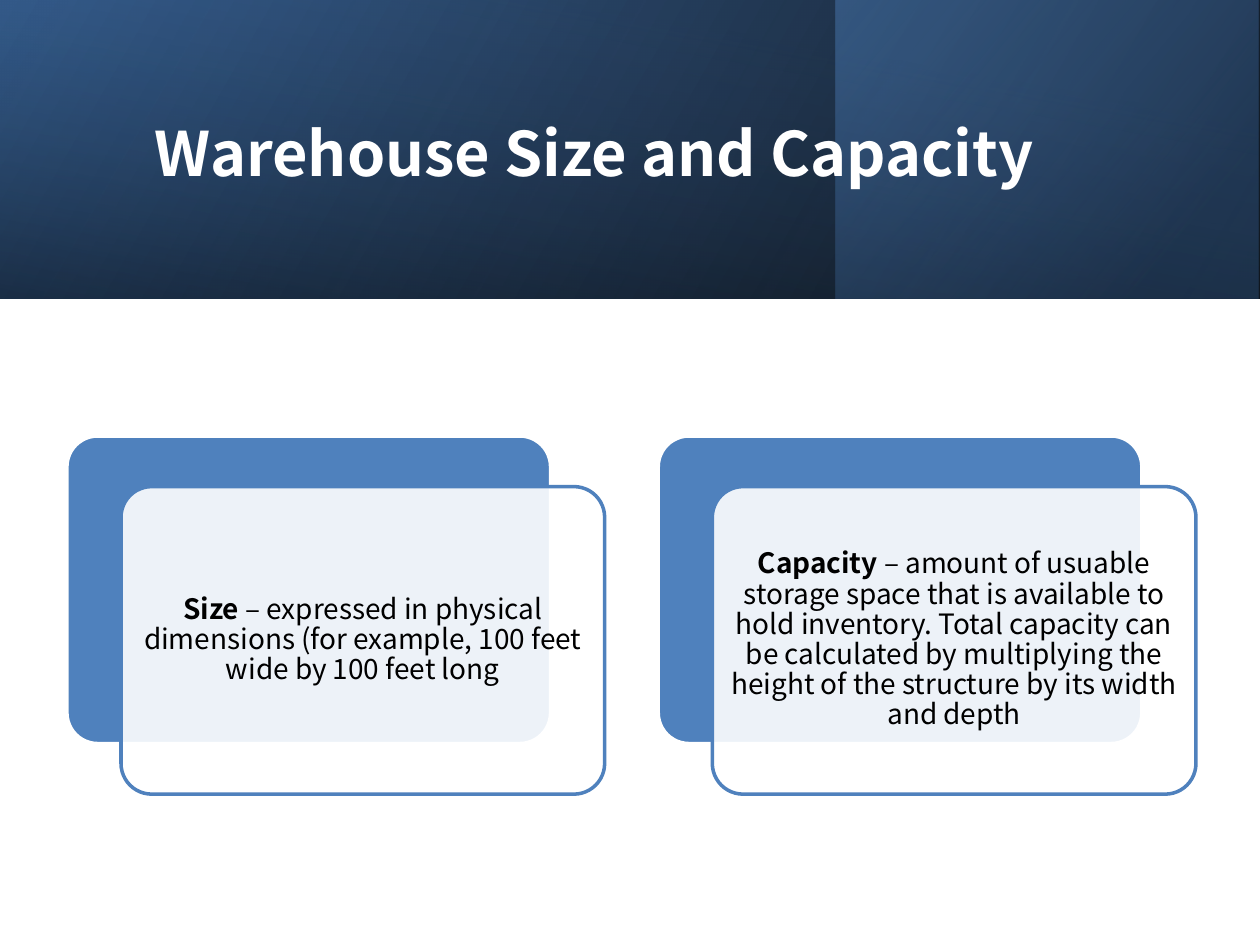
from lxml.etree import SubElement
from pptx import Presentation
from pptx.dml.color import RGBColor
from pptx.enum.shapes import MSO_SHAPE as Preset
from pptx.enum.text import MSO_ANCHOR as Anchor, MSO_AUTO_SIZE as AutoSize, PP_ALIGN as Align
from pptx.oxml.ns import qn
from pptx.util import Cm, Pt

FONT = "Noto Sans CJK KR"
WHITE = RGBColor(0xFF, 0xFF, 0xFF)
BLACK = RGBColor(0x00, 0x00, 0x00)
BLUE = RGBColor(0x4F, 0x81, 0xBD)
DEEP_BLUE = RGBColor(0x37, 0x60, 0x92)
NAVY = RGBColor(0x25, 0x40, 0x61)

PAGE_WIDTH, PAGE_HEIGHT = 25.4, 19.05
BANNER_HEIGHT = 6.02
CARD_LEFT, CARD_TOP, CARD_STEP = 1.35, 8.79, 11.92
CARD_WIDTH, CARD_HEIGHT = 9.75, 6.2
CARD_SHIFT_X, CARD_SHIFT_Y = 1.09, 1.02

CARDS = [
    ("Size", " – expressed in physical dimensions (for example, 100 feet wide by 100 feet long"),
    ("Capacity", " – amount of usuable storage space that is available to hold inventory. "
                 "Total capacity can be calculated by multiplying the height of the structure "
                 "by its width and depth"),
]


def set_opacity(color_element, percent):
    SubElement(color_element, qn("a:alpha")).set("val", str(percent * 1000))


def add_panel(page, preset, left, top, width, height):
    panel = page.shapes.add_shape(preset, Cm(left), Cm(top), Cm(width), Cm(height))
    panel.shadow.inherit = False
    return panel


def add_gradient_panel(page, left, top, width, height, angle, stops, rotation=0):
    panel = add_panel(page, Preset.RECTANGLE, left, top, width, height)
    panel.rotation = rotation
    panel.line.fill.background()
    properties = panel._element.spPr
    properties.find(qn("a:xfrm")).set("flipH", "1")
    panel.fill.gradient()
    gradient = properties.find(qn("a:gradFill"))
    gradient.set("rotWithShape", "1")
    gradient.find(qn("a:lin")).set("ang", str(angle * 60000))
    stop_list = gradient.find(qn("a:gsLst"))
    for old_stop in list(stop_list):
        stop_list.remove(old_stop)
    for position, color, opacity in stops:
        stop = SubElement(stop_list, qn("a:gs"))
        stop.set("pos", str(position * 1000))
        color_element = SubElement(stop, qn("a:srgbClr"))
        color_element.set("val", str(color))
        set_opacity(color_element, opacity)


def add_banner(page, left, top, width, height):
    add_gradient_panel(page, left, top, width, height, 330,
                       [(0, BLACK, 96), (100, DEEP_BLUE, 100)])
    add_gradient_panel(page, left + 16.84, top, 8.53, height, 320,
                       [(19, NAVY, 68), (100, BLUE, 48)])
    offset = (width - height) / 2
    add_gradient_panel(page, left + offset, top - offset, height, width, 350,
                       [(23, DEEP_BLUE, 16), (99, BLACK, 45)], rotation=270)


def place_title(page, left, top, width, height):
    title = page.shapes.title
    title.left, title.top, title.width, title.height = Cm(left), Cm(top), Cm(width), Cm(height)
    title._element.getparent().append(title._element)
    frame = title.text_frame
    frame.text = "Warehouse Size and Capacity"
    frame.auto_size = AutoSize.NONE
    frame.vertical_anchor = Anchor.MIDDLE
    para = frame.paragraphs[0]
    para.alignment = Align.LEFT
    para.line_spacing = 0.9
    para.font.name, para.font.size, para.font.bold = FONT, Pt(35), True
    para.font.color.rgb = WHITE


def add_rounded_panel(page, left, top, width, height, fill_color, line_color):
    panel = add_panel(page, Preset.ROUNDED_RECTANGLE, left, top, width, height)
    panel.adjustments[0] = 0.1
    panel.fill.solid()
    panel.fill.fore_color.rgb = fill_color
    panel.line.color.rgb = line_color
    panel.line.width = Pt(2)
    return panel


def add_card(page, left, top, width, height, term, definition):
    add_rounded_panel(page, left, top, width, height, BLUE, WHITE)
    front = add_rounded_panel(page, left + CARD_SHIFT_X, top + CARD_SHIFT_Y,
                              width, height, WHITE, BLUE)
    set_opacity(front._element.spPr.find(qn("a:solidFill"))[0], 90)
    frame = front.text_frame
    frame.word_wrap = True
    frame.vertical_anchor = Anchor.MIDDLE
    frame.margin_left = frame.margin_right = Cm(0.17)
    frame.margin_top = frame.margin_bottom = Cm(0.17)
    para = frame.paragraphs[0]
    para.alignment = Align.CENTER
    para.line_spacing = 0.9
    para.font.name, para.font.size = FONT, Pt(16)
    para.font.color.rgb = BLACK
    for text, bold in ((term, True), (definition, False)):
        span = para.add_run()
        span.text = text
        span.font.bold = bold


def main():
    deck = Presentation()
    deck.slide_width, deck.slide_height = Cm(PAGE_WIDTH), Cm(PAGE_HEIGHT)
    page = deck.slides.add_slide(deck.slide_layouts[5])
    add_banner(page, 0, 0, PAGE_WIDTH, BANNER_HEIGHT)
    place_title(page, 2.87, 0.97, 20.24, 4.37)
    for index, (term, definition) in enumerate(CARDS):
        add_card(page, CARD_LEFT + index * CARD_STEP, CARD_TOP,
                 CARD_WIDTH, CARD_HEIGHT, term, definition)
    deck.save("out.pptx")


if __name__ == "__main__":
    main()
